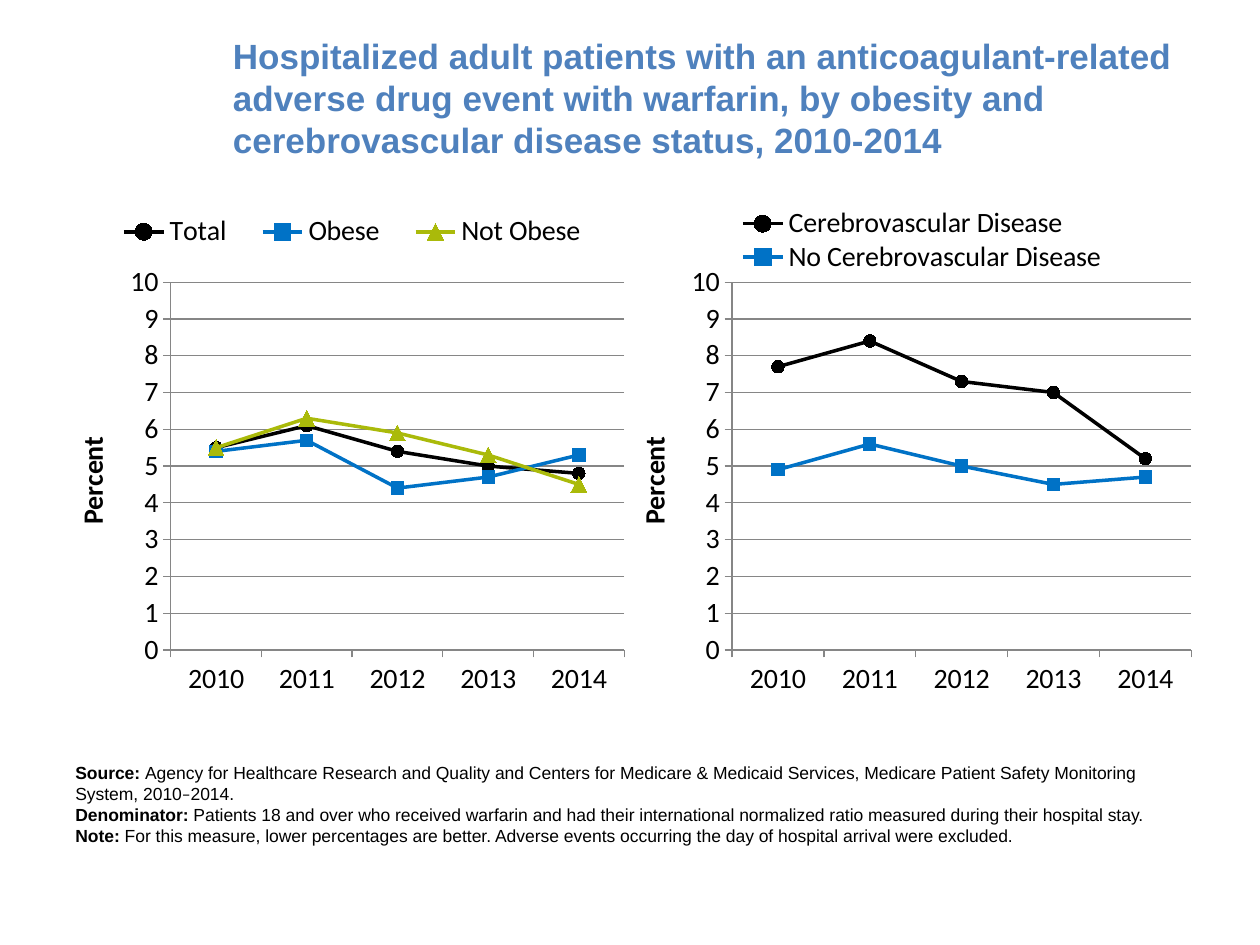
from lxml import etree
from pptx import Presentation
from pptx.chart.data import CategoryChartData
from pptx.dml.color import RGBColor
from pptx.enum import chart as ch, text as tx
from pptx.oxml import ns
from pptx.util import Inches, Pt

COLORS = {"title": "4F81BD", "text": "000000", "grid": "868686",
          "black": "000000", "blue": "0072C6", "green": "AABA0A"}
YEARS = ["2010", "2011", "2012", "2013", "2014"]
# Each series look: colour, marker style, marker size
LOOKS = [("black", ch.XL_MARKER_STYLE.CIRCLE, 7),
         ("blue", ch.XL_MARKER_STYLE.SQUARE, 7),
         ("green", ch.XL_MARKER_STYLE.TRIANGLE, 9)]
OBESITY = {"Total": (5.5, 6.1, 5.4, 5, 4.8),
           "Obese": (5.4, 5.7, 4.4, 4.7, 5.3),
           "Not Obese": (5.5, 6.3, 5.9, 5.3, 4.5)}
CEREBROVASCULAR = {"Cerebrovascular Disease": (7.7, 8.4, 7.3, 7, 5.2),
                   "No Cerebrovascular Disease": (4.9, 5.6, 5, 4.5, 4.7)}
TITLE = ("Hospitalized adult patients with an anticoagulant-related adverse drug "
         "event with warfarin, by obesity and cerebrovascular disease status, 2010-2014")
# Each run: text, bold, font
FOOTNOTES = [
    [("Source: ", True, "Arial"),
     ("Agency for Healthcare Research and Quality and Centers for Medicare & Medicaid "
      "Services, Medicare Patient Safety Monitoring System, 2010", False, "Arial"),
     ("–", False, "Calibri"), ("2014.", False, "Arial")],
    [("Denominator:", True, "Arial"),
     (" Patients 18 and over who received warfarin and had their international "
      "normalized ratio measured during their hospital stay.", False, "Arial")],
    [("Note:", True, "Arial"),
     (" For this measure, lower percentages are better. Adverse events occurring "
      "the day of hospital arrival were excluded.", False, "Arial")],
]


def rgb(name):
    return RGBColor.from_string(COLORS[name])


def style_font(font, size, color="text", name="Calibri", bold=False):
    font.name, font.size, font.bold = name, Pt(size), bold
    font.color.rgb = rgb(color)


def add_text(slide, box, paragraphs, size, color, anchor):
    frame = slide.shapes.add_textbox(*map(Inches, box)).text_frame
    frame.word_wrap = True
    frame.vertical_anchor = anchor
    for index, runs in enumerate(paragraphs):
        paragraph = frame.paragraphs[0] if index == 0 else frame.add_paragraph()
        for words, bold, name in runs:
            run = paragraph.add_run()
            run.text = words
            style_font(run.font, size, color, name, bold)


def place(part, after, box, inner=False):
    """Give a chart part a manual layout, in fractions of the chart."""
    for old in part.findall(ns.qn("c:layout")):
        part.remove(old)
    layout = etree.Element(ns.qn("c:layout"))
    manual = etree.SubElement(layout, ns.qn("c:manualLayout"))
    settings = [("layoutTarget", "inner")] if inner else []
    settings += [("xMode", "edge"), ("yMode", "edge"), *zip("xywh", box)]
    for tag, value in settings:
        etree.SubElement(manual, ns.qn(f"c:{tag}")).set("val", str(value))
    part.insert(after, layout)


def style_axes(chart):
    for axis in (chart.category_axis, chart.value_axis):
        style_font(axis.tick_labels.font, 16)
        axis.major_tick_mark = ch.XL_TICK_MARK.OUTSIDE
        axis.format.line.color.rgb = rgb("grid")
    percent = chart.value_axis
    percent.minimum_scale, percent.maximum_scale, percent.major_unit = 0, 10, 1
    percent.tick_labels.number_format = "0"
    percent.tick_labels.number_format_is_linked = False
    percent.has_major_gridlines = True
    percent.major_gridlines.format.line.color.rgb = rgb("grid")
    label = percent.axis_title.text_frame.paragraphs[0].add_run()
    label.text = "Percent"
    style_font(label.font, 16, bold=True)


def style_series(series, color, marker_style, marker_size):
    series.smooth = False
    series.format.line.color.rgb = rgb(color)
    series.format.line.width = Pt(2)
    marker = series.marker
    marker.style, marker.size = marker_style, marker_size
    marker.format.fill.solid()
    marker.format.fill.fore_color.rgb = rgb(color)
    marker.format.line.color.rgb = rgb(color)


def add_trend_chart(slide, left, rates, plot_box, legend_box):
    data = CategoryChartData(number_format="0.0")
    data.categories = YEARS
    for name, values in rates.items():
        data.add_series(name, values)
    chart = slide.shapes.add_chart(
        ch.XL_CHART_TYPE.LINE_MARKERS, Inches(left), Inches(1.6),
        Inches(4.5), Inches(4), data).chart
    style_font(chart.font, 10, name="Arial")
    chart.has_title = False
    chart.plots[0].vary_by_categories = False
    style_axes(chart)
    for series, look in zip(chart.plots[0].series, LOOKS):
        style_series(series, *look)
    chart.has_legend = True
    legend = chart.legend
    legend.position = ch.XL_LEGEND_POSITION.TOP
    legend.include_in_layout = False
    style_font(legend.font, 16)
    plot_area = chart.plots[0]._element.getparent()
    place(plot_area, 0, plot_box, inner=True)
    place(legend._element, 1, legend_box)


def main():
    deck = Presentation()
    deck.slide_width, deck.slide_height = Inches(10), Inches(7.5)
    slide = deck.slides.add_slide(deck.slide_layouts[6])
    add_text(slide, (1.75, 0.3, 7.75, 0.95), [[(TITLE, True, "Arial")]],
             20, "title", tx.MSO_ANCHOR.MIDDLE)
    add_trend_chart(slide, 0.5, OBESITY, (0.19, 0.16, 0.8, 0.73),
                    (0.06, 0.02, 0.9, 0.08))
    add_trend_chart(slide, 5, CEREBROVASCULAR, (0.18, 0.16, 0.81, 0.73),
                    (0.18, 0.01, 0.67, 0.13))
    add_text(slide, (0.5, 6, 9, 0.77), FOOTNOTES, 10, "text", tx.MSO_ANCHOR.TOP)
    deck.save("out.pptx")


if __name__ == "__main__":
    main()
